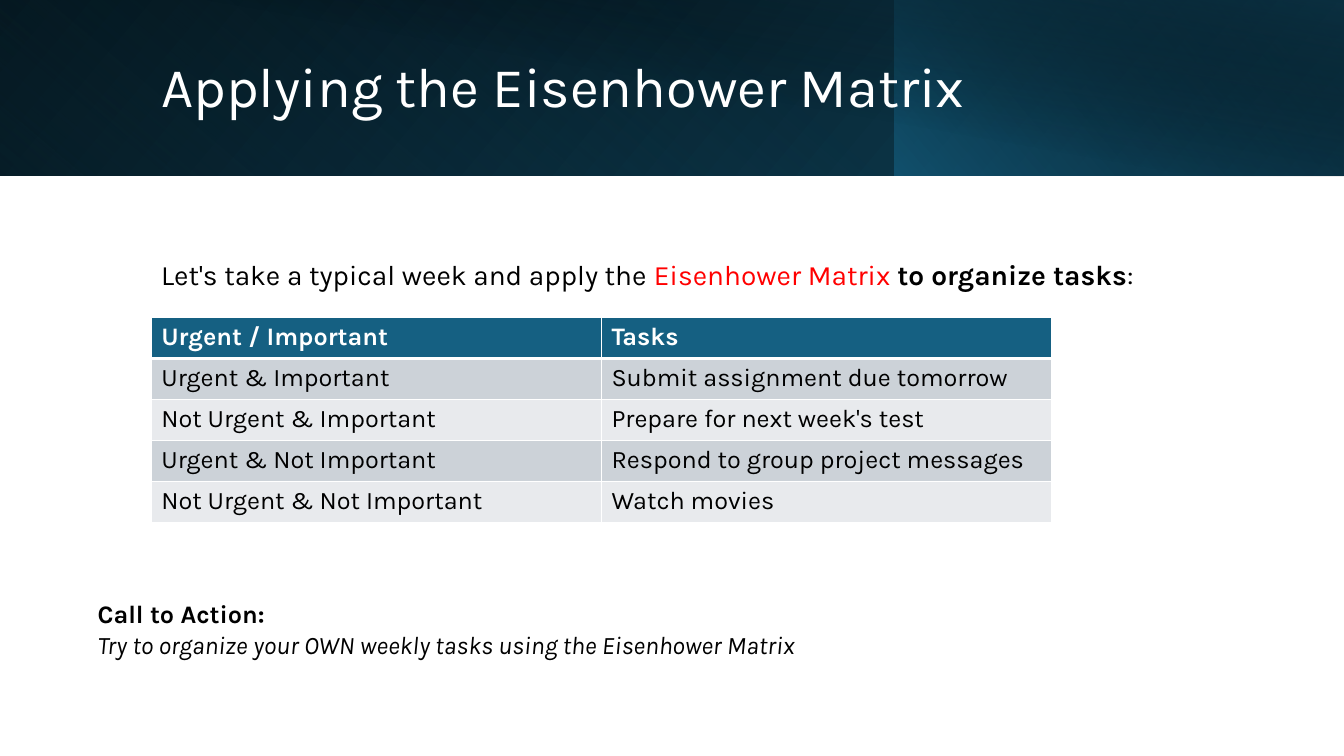
from lxml import etree
from pptx import Presentation
from pptx.dml.color import RGBColor
from pptx.enum.shapes import MSO_SHAPE
from pptx.enum.text import MSO_ANCHOR, PP_ALIGN
from pptx.oxml.ns import qn
from pptx.util import Inches, Pt

RECTANGLE = MSO_SHAPE.RECTANGLE
MIDDLE = MSO_ANCHOR.MIDDLE
TOP = MSO_ANCHOR.TOP
LEFT = PP_ALIGN.LEFT

WIDTH, HEIGHT = 13.33, 7.5
MARGIN = 1.5
BAND_HEIGHT = 1.74
SPLIT = 8.87
FONT = "Karla"
WHITE, BLACK, RED = "FFFFFF", "000000", "FF0000"
BLUE, NAVY, TEAL = "156082", "0B3041", "104862"
ROW_FILLS = ("CCD2D8", "E8EAED")

BANDS = [
    {"box": (0, 0, WIDTH, BAND_HEIGHT), "flip": True, "rotation": 0, "angle": 140,
     "stops": [(0, BLACK, 100), (100, TEAL, 100)]},
    {"box": (0, 0, SPLIT, BAND_HEIGHT), "flip": True, "rotation": 180, "angle": 230,
     "stops": [(20, BLUE, 0), (100, NAVY, 55)]},
    {"box": (SPLIT, 0, WIDTH - SPLIT, BAND_HEIGHT), "flip": True, "rotation": 0, "angle": 220,
     "stops": [(0, BLUE, 66), (100, BLACK, 30)]},
    {"box": (0.5, 0, WIDTH - 0.5, 1.75), "flip": False, "rotation": 0, "angle": 280,
     "stops": [(50, BLACK, 0), (99, NAVY, 52)]},
]

TASKS = [
    ("Urgent / Important", "Tasks"),
    ("Urgent & Important", "Submit assignment due tomorrow"),
    ("Not Urgent & Important", "Prepare for next week's test"),
    ("Urgent & Not Important", "Respond to group project messages"),
    ("Not Urgent & Not Important", "Watch movies"),
]


def color(hex_value):
    """Turn a hex string into a colour."""
    return RGBColor.from_string(hex_value)


def set_all(target, values):
    """Set each attribute of the target from a dict."""
    for name, value in values.items():
        setattr(target, name, value)


def place(shape, box):
    """Position a shape by left, top, width and height in inches."""
    set_all(shape, dict(zip(("left", "top", "width", "height"), map(Inches, box))))


def add_run(paragraph, text, size, hex_value=BLACK, **style):
    """Append one formatted run to a paragraph."""
    run = paragraph.add_run()
    run.text = text
    set_all(run.font, {"name": FONT, "size": Pt(size), **style})
    run.font.color.rgb = color(hex_value)


def add_band(slide, box, flip, rotation, angle, stops):
    """Draw a rectangle with a two-stop, partly transparent gradient."""
    band = slide.shapes.add_shape(RECTANGLE, *map(Inches, box))
    band.shadow.inherit = False
    band.line.fill.background()
    band.rotation = rotation
    if flip:
        band.element.spPr.find(qn("a:xfrm")).set("flipH", "1")
    band.fill.gradient()
    band.fill.gradient_angle = 360 - angle
    for stop, (position, hex_value, _) in zip(band.fill.gradient_stops, stops):
        stop.position = position / 100
        stop.color.rgb = color(hex_value)
    for element, (_, _, opacity) in zip(band.element.spPr.iter(qn("a:srgbClr")), stops):
        etree.SubElement(element, qn("a:alpha"), val=str(opacity * 1000))


def format_title(slide, text):
    """Place the title in front of the bands and format it."""
    title = slide.shapes.title
    title.element.getparent().append(title.element)
    place(title, (MARGIN, 0.32, 10.82, 1.13))
    set_all(title.text_frame, {"vertical_anchor": MIDDLE, "word_wrap": True})
    paragraph = title.text_frame.paragraphs[0]
    set_all(paragraph, {"alignment": LEFT, "line_spacing": 0.9})
    add_run(paragraph, text, 40, WHITE)


def add_text(slide, box, size, lines, **spacing):
    """Add a text box whose lines are lists of (text, colour, style) runs."""
    frame = slide.shapes.add_textbox(*map(Inches, box)).text_frame
    set_all(frame, {"word_wrap": True, "vertical_anchor": TOP})
    for index, runs in enumerate(lines):
        paragraph = frame.add_paragraph() if index else frame.paragraphs[0]
        set_all(paragraph, spacing)
        for text, hex_value, style in runs:
            add_run(paragraph, text, size, hex_value, **style)


def add_borders(cell, widths):
    """Give a cell white borders with widths in points per side."""
    properties = cell._tc.get_or_add_tcPr()
    for index, (side, width) in enumerate(widths.items()):
        line = etree.Element(qn(f"a:{side}"), w=str(Pt(width)))
        fill = etree.SubElement(line, qn("a:solidFill"))
        etree.SubElement(fill, qn("a:srgbClr"), val=WHITE)
        properties.insert(index, line)


def add_task_table(slide, box, rows):
    """Add the task table with a dark header and alternating rows."""
    table = slide.shapes.add_table(len(rows), len(rows[0]), *map(Inches, box)).table
    for row_index, row in enumerate(rows):
        header = row_index == 0
        for column_index, text in enumerate(row):
            cell = table.cell(row_index, column_index)
            cell.fill.solid()
            cell.fill.fore_color.rgb = color(BLUE if header else ROW_FILLS[(row_index - 1) % 2])
            add_run(cell.text_frame.paragraphs[0], text, 18, WHITE if header else BLACK, bold=header)
            add_borders(cell, {"lnL": 1, "lnR": 1, "lnT": 3 if row_index == 1 else 1,
                               "lnB": 3 if header else 1})


def main():
    """Build the slide and save it."""
    presentation = Presentation()
    set_all(presentation, {"slide_width": Inches(WIDTH), "slide_height": Inches(HEIGHT)})
    slide = presentation.slides.add_slide(presentation.slide_layouts.get_by_name("Title Only"))
    for band in BANDS:
        add_band(slide, **band)
    format_title(slide, "Applying the Eisenhower Matrix")
    add_text(slide, (MARGIN, 2.54, 10.57, 0.5), 20, [[
        ("Let's take a typical week and apply the ", BLACK, {}),
        ("Eisenhower Matrix ", RED, {}),
        ("to organize tasks", BLACK, {"bold": True}),
        (":", BLACK, {}),
    ]], line_spacing=0.9, space_before=Pt(10))
    add_task_table(slide, (MARGIN, 3.15, 8.93, 2.03), TASKS)
    add_text(slide, (0.87, 5.89, 11.03, 0.71), 18, [
        [("Call to Action:", BLACK, {"bold": True})],
        [("Try to organize your OWN weekly tasks using the Eisenhower Matrix", BLACK, {"italic": True})],
    ])
    presentation.save("out.pptx")


if __name__ == "__main__":
    main()
